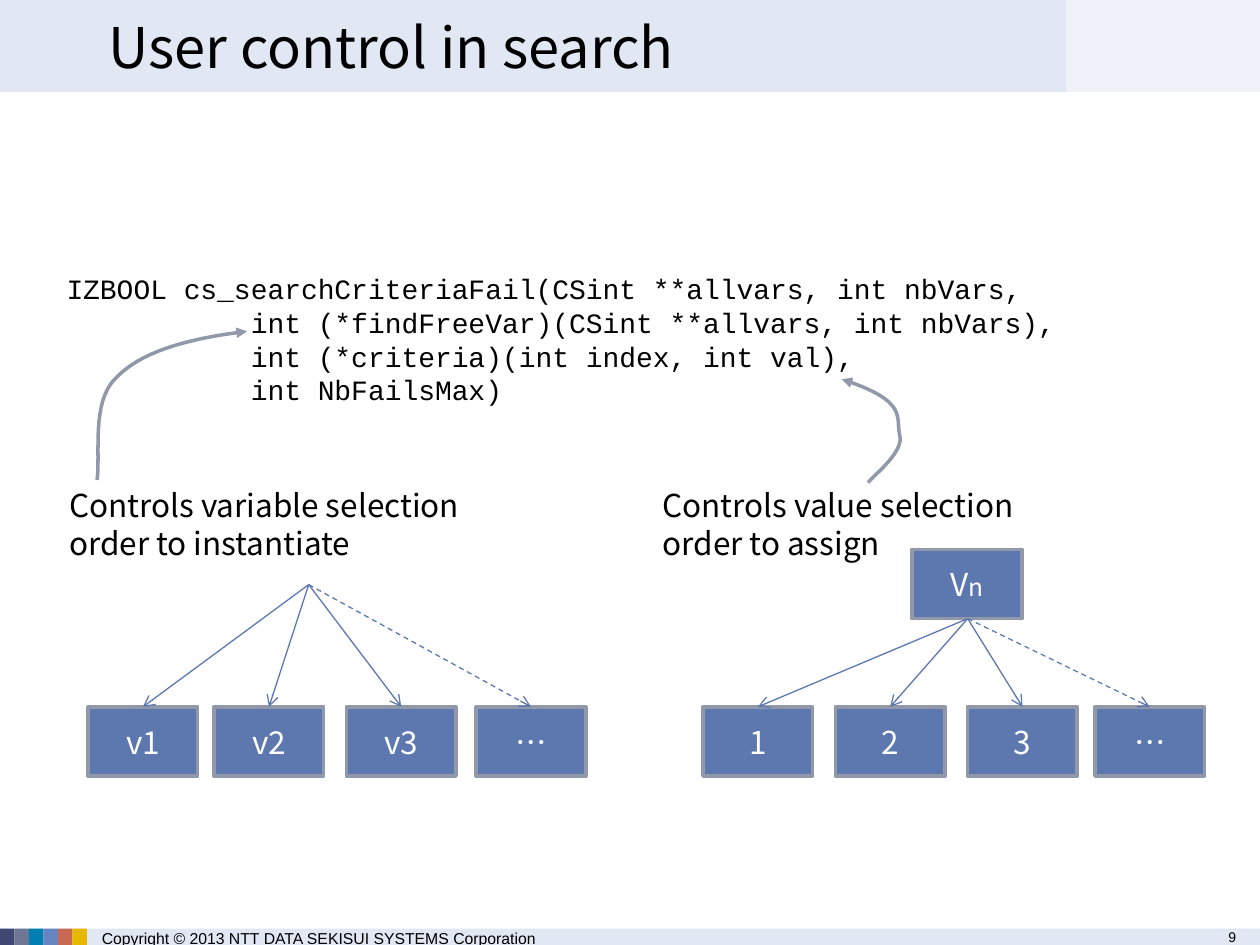
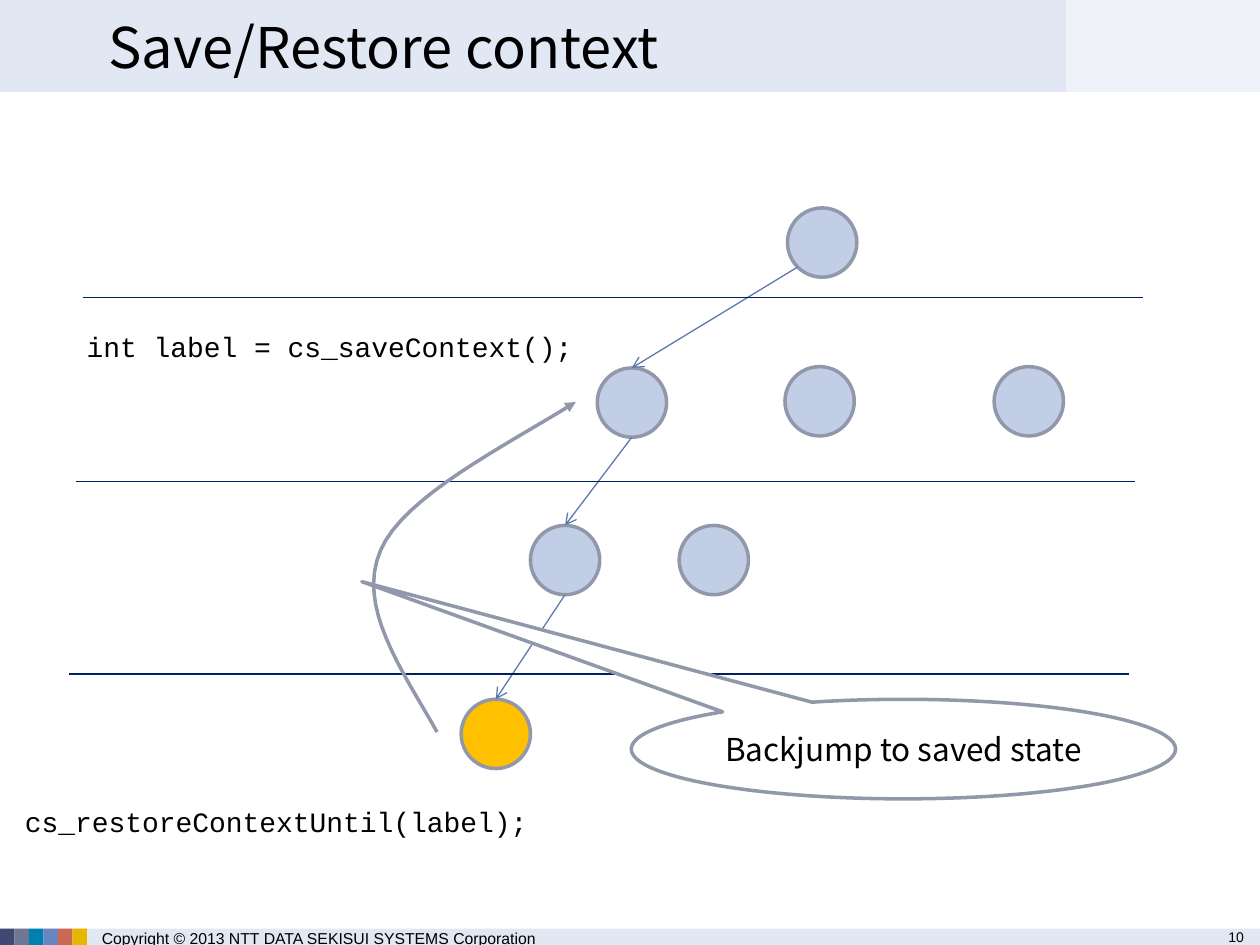
from dataclasses import dataclass
from itertools import pairwise

from lxml.etree import SubElement
from pptx import Presentation
from pptx.dml.color import RGBColor
from pptx.enum.dml import MSO_LINE_DASH_STYLE as Dash
from pptx.enum.shapes import MSO_CONNECTOR as Connector, MSO_SHAPE as Shape
from pptx.enum.text import MSO_ANCHOR as Anchor, MSO_AUTO_SIZE as AutoSize, PP_ALIGN as Align
from pptx.oxml.ns import qn
from pptx.util import Inches, Pt


@dataclass(frozen=True)
class Theme:
    """Colours, fonts and type sizes shared by the slides."""
    band: str = "E1E7F3"
    swatches: tuple = ("3F4973", "6F7796", "0080B1", "6785C1", "C96953", "E6B600")
    ink: str = "000000"
    paper: str = "FFFFFF"
    box: str = "5D78AF"
    outline: str = "9098AA"
    node: str = "C2CEE6"
    current: str = "FFC000"
    level: str = "002060"
    body_font: str = "Noto Sans CJK JP"
    code_font: str = "Courier New"
    footer_font: str = "Arial"
    title_size: float = 32
    body_size: float = 18
    code_size: float = 16
    index_size: float = 14
    footer_size: float = 9
    page_size: float = 8
    heavy: float = 2
    thin: float = 0.75


@dataclass(frozen=True)
class Box:
    """A region in inches."""
    left: float
    top: float
    width: float
    height: float

    def at(self, dx, dy):
        """Return the point at an offset from the top left corner."""
        return self.left + dx, self.top + dy

    def inner(self, dx, dy, width, height):
        """Return a box placed relative to this one."""
        return Box(*self.at(dx, dy), width, height)

    def emu(self):
        """Return the region as lengths."""
        return [Inches(n) for n in (self.left, self.top, self.width, self.height)]


THEME = Theme()
SLIDE = Box(0, 0, 10, 7.5)
COPYRIGHT = "Copyright © 2013 NTT DATA SEKISUI SYSTEMS Corporation"
NODE = 0.55
BOX_WIDTH = 0.87
BOX_HEIGHT = 0.55


def rgb(code):
    """Turn a hex code into a colour."""
    return RGBColor.from_string(code)


def style(frame, size, font=THEME.body_font, color=THEME.ink, align=Align.LEFT):
    """Format every run of a text frame."""
    for paragraph in frame.paragraphs:
        paragraph.alignment = align
        for run in paragraph.runs:
            run.font.size, run.font.name = Pt(size), font
            run.font.color.rgb = rgb(color)


def add_text(slide, box, text, size, font=THEME.body_font, inset=0.05):
    """Add a wrapped text box."""
    frame = slide.shapes.add_textbox(*box.emu()).text_frame
    frame.word_wrap = True
    frame.margin_top = frame.margin_bottom = Inches(inset)
    frame.text = text
    style(frame, size, font)


def add_form(slide, kind, box, fill, outlined=True):
    """Add a flat filled preset shape."""
    form = slide.shapes.add_shape(kind, *box.emu())
    form.shadow.inherit = False
    form.fill.solid()
    form.fill.fore_color.rgb = rgb(fill)
    if outlined:
        form.line.color.rgb = rgb(THEME.outline)
        form.line.width = Pt(THEME.heavy)
    else:
        form.line.fill.background()
    return form


def add_label(form, text, color):
    """Centre a label inside a shape."""
    frame = form.text_frame
    frame.word_wrap = True
    frame.vertical_anchor = Anchor.MIDDLE
    frame.text = text
    style(frame, THEME.body_size, color=color, align=Align.CENTER)
    return frame.paragraphs[0]


def set_arrowhead(line, kind):
    """Put an arrowhead at the end of a line."""
    SubElement(line._get_or_add_ln(), qn("a:tailEnd"), type=kind)


def add_line(slide, start, end, color, arrow=False, dashed=False):
    """Draw a thin straight line, optionally as an arrow."""
    connector = slide.shapes.add_connector(
        Connector.STRAIGHT, *(Inches(n) for n in (*start, *end)))
    SubElement(connector._element.spPr, qn("a:effectLst"))
    connector.line.color.rgb = rgb(color)
    connector.line.width = Pt(THEME.thin)
    if dashed:
        connector.line.dash_style = Dash.DASH
    if arrow:
        set_arrowhead(connector.line, "arrow")


def bezier(controls, steps=16):
    """Yield points along a cubic curve, leaving out its start."""
    for step in range(1, steps + 1):
        t = step / steps
        weights = ((1 - t) ** 3, 3 * t * (1 - t) ** 2, 3 * t * t * (1 - t), t ** 3)
        yield tuple(Inches(sum(w * c for w, c in zip(weights, axis)))
                    for axis in zip(*controls))


def add_curved_arrow(slide, box, offsets):
    """Draw an arrow along chained cubic curves given as offsets in a box."""
    points = [box.at(*offset) for offset in offsets]
    builder = slide.shapes.build_freeform(*(Inches(n) for n in points[0]))
    for first in range(0, len(points) - 1, 3):
        builder.add_line_segments(bezier(points[first:first + 4]), close=False)
    curve = builder.convert_to_shape()
    curve.shadow.inherit = False
    curve.fill.background()
    curve.line.color.rgb = rgb(THEME.outline)
    curve.line.width = Pt(THEME.heavy)
    set_arrowhead(curve.line, "triangle")


def add_footer(slide, box, page):
    """Add the footer band, swatches, copyright line and page number."""
    add_form(slide, Shape.RECTANGLE, box, THEME.band, outlined=False)
    pitch = 0.69 / len(THEME.swatches)
    for index, color in enumerate(THEME.swatches):
        swatch = box.inner(index * pitch, 0, pitch, box.height)
        add_form(slide, Shape.RECTANGLE, swatch, color, outlined=False)
    add_text(slide, box.inner(9.65, 0, 0.35, 0.27), str(page),
             THEME.page_size, THEME.footer_font, inset=0)
    add_text(slide, box.inner(0.71, 0, 3.89, 0.15), COPYRIGHT,
             THEME.footer_size, THEME.footer_font, inset=0)


def add_header(slide, box, heading):
    """Add the title bands and format the title above them."""
    split = 8.46
    add_form(slide, Shape.RECTANGLE, box.inner(0, 0, split, box.height),
             THEME.band, outlined=False)
    pale = add_form(slide, Shape.RECTANGLE,
                    box.inner(split, 0, box.width - split, box.height),
                    THEME.band, outlined=False)
    tint = pale._element.spPr.find(qn("a:solidFill"))[0]
    SubElement(tint, qn("a:alpha"), val="50000")
    title = slide.shapes.title
    slide.shapes._spTree.append(title._element)
    title.left, title.top, title.width, title.height = box.inner(0.68, 0, 7.7, box.height).emu()
    frame = title.text_frame
    frame.auto_size = AutoSize.NONE
    frame.vertical_anchor = Anchor.MIDDLE
    frame.margin_left = frame.margin_right = Inches(0.18)
    frame.text = heading
    style(frame, THEME.title_size)


def new_slide(deck, heading, page):
    """Start a titled slide with the shared bands."""
    slide = deck.slides.add_slide(deck.slide_layouts[5])
    add_footer(slide, SLIDE.inner(0, 7.37, SLIDE.width, 0.13), page)
    add_header(slide, SLIDE.inner(0, 0, SLIDE.width, 0.73), heading)
    return slide


def add_choices(slide, box, root, choices):
    """Draw labelled boxes along the bottom with arrows from a root point."""
    top = box.height - BOX_HEIGHT
    for label, offset in choices.items():
        choice = add_form(slide, Shape.RECTANGLE,
                          box.inner(offset, top, BOX_WIDTH, BOX_HEIGHT), THEME.box)
        add_label(choice, label, THEME.paper)
        add_line(slide, box.at(*root), box.at(offset + BOX_WIDTH / 2, top),
                 THEME.box, arrow=True, dashed=label == "…")


def add_variable_selection(slide, box):
    """Explain the choice of the next variable."""
    add_text(slide, box.inner(0, 0, 3.51, 0.71),
             "Controls variable selection order to instantiate", THEME.body_size)
    add_choices(slide, box, (2, 0.83), {"v1": 0.25, "v2": 1.25, "v3": 2.3, "…": 3.33})
    add_curved_arrow(slide, box, [(0.32, 0), (0.35, -0.19), (0.27, -0.62), (0.47, -0.81),
                                  (0.66, -1.01), (1.01, -1.12), (1.51, -1.18)])


def add_value_selection(slide, box):
    """Explain the choice of the value to assign."""
    variable = add_form(slide, Shape.RECTANGLE,
                        box.inner(2.08, 0.55, BOX_WIDTH, BOX_HEIGHT), THEME.box)
    name = add_label(variable, "V", THEME.paper)
    index = name.add_run()
    index.text = "n"
    style(variable.text_frame, THEME.body_size, color=THEME.paper, align=Align.CENTER)
    index.font.size = Pt(THEME.index_size)
    add_text(slide, box.inner(0, 0, 3.51, 0.71),
             "Controls value selection order to assign", THEME.body_size)
    add_choices(slide, box, (2.52, 1.1), {"1": 0.42, "2": 1.47, "3": 2.52, "…": 3.53})
    add_curved_arrow(slide, box, [(1.73, 0.02), (1.8, -0.06), (2.02, -0.23), (1.98, -0.36),
                                  (1.95, -0.5), (2.05, -0.63), (1.52, -0.8)])


def add_search_tree(slide, box):
    """Draw the search levels, nodes and the path to the current node."""
    root, saved, deeper, current = (5.7, 0), (4.19, 1.27), (3.66, 2.52), (3.11, 3.9)
    for dx, dy in (root, (5.68, 1.26), (7.34, 1.26), saved, deeper, (4.84, 2.52), current):
        color = THEME.current if (dx, dy) == current else THEME.node
        add_form(slide, Shape.OVAL, box.inner(dx, dy, NODE, NODE), color)
    for parent, child in pairwise((root, saved, deeper, current)):
        exit_x, exit_y = (0.08, 0.47) if parent == root else (NODE / 2, NODE)
        add_line(slide, box.at(parent[0] + exit_x, parent[1] + exit_y),
                 box.at(child[0] + NODE / 2, child[1]), THEME.box, arrow=True)
    for dx, dy in ((0.11, 0.71), (0.05, 2.17), (0, 3.7)):
        add_line(slide, box.at(dx, dy), box.at(dx + 8.41, dy), THEME.level)


def add_backjump(slide, box):
    """Show the jump back to the saved state with its calls and callout."""
    add_text(slide, box.inner(0.49, 0, 4.13, 0.37), "int label = cs_saveContext();",
             THEME.code_size, THEME.code_font)
    add_curved_arrow(slide, box, [(3.37, 3.24), (3.08, 2.73), (2.73, 2.24), (2.92, 1.8),
                                  (3.1, 1.37), (3.91, 0.97), (4.47, 0.62)])
    add_text(slide, box.inner(0, 3.77, 4.77, 0.37), "cs_restoreContextUntil(label);",
             THEME.code_size, THEME.code_font)
    callout = add_form(slide, Shape.OVAL_CALLOUT, box.inner(4.91, 2.98, 4.32, 0.79), THEME.paper)
    callout.adjustments[0], callout.adjustments[1] = -0.995, -1.682
    add_label(callout, "Backjump to saved state", THEME.ink)


def build_user_control(deck):
    """Build the slide on user control in search."""
    slide = new_slide(deck, "User control in search", 9)
    signature = "\n".join((
        "IZBOOL cs_searchCriteriaFail(CSint **allvars, int nbVars,",
        "           int (*findFreeVar)(CSint **allvars, int nbVars),",
        "           int (*criteria)(int index, int val),",
        "           int NbFailsMax)"))
    add_text(slide, SLIDE.inner(0.43, 2.11, 8.86, 1.17), signature,
             THEME.code_size, THEME.code_font)
    add_variable_selection(slide, SLIDE.inner(0.45, 3.81, 4.2, 2.35))
    add_value_selection(slide, SLIDE.inner(5.16, 3.81, 4.4, 2.35))


def build_save_restore(deck):
    """Build the slide on saving and restoring the context."""
    slide = new_slide(deck, "Save/Restore context", 10)
    add_search_tree(slide, SLIDE.inner(0.55, 1.65, 8.52, 4.45))
    add_backjump(slide, SLIDE.inner(0.1, 2.57, 9.23, 4.14))


def main():
    """Build and save the deck."""
    deck = Presentation()
    deck.slide_width, deck.slide_height = Inches(SLIDE.width), Inches(SLIDE.height)
    build_user_control(deck)
    build_save_restore(deck)
    deck.save("out.pptx")


if __name__ == "__main__":
    main()
